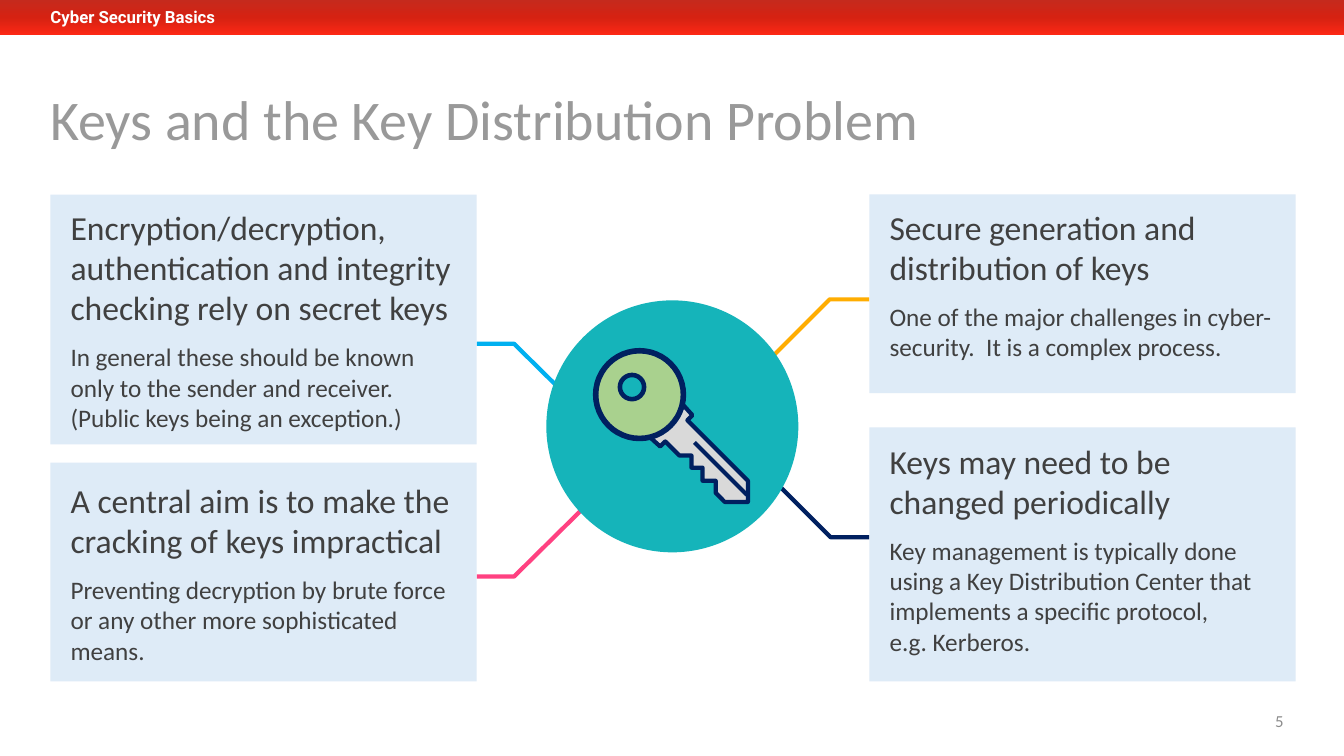
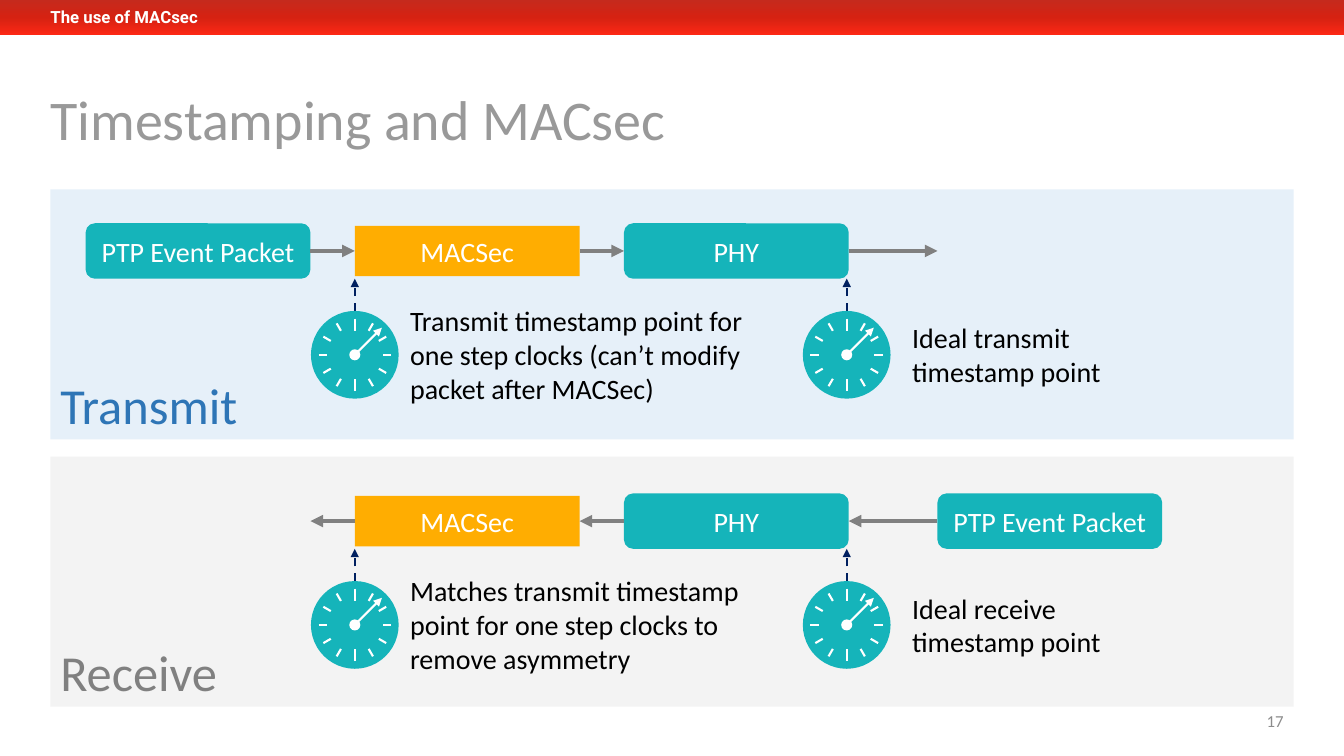
from collections import namedtuple
from copy import deepcopy
from dataclasses import dataclass
from math import cos, radians, sin

from lxml.etree import SubElement
from pptx import Presentation
from pptx.dml.color import RGBColor
from pptx.enum.dml import MSO_LINE as Dash
from pptx.enum.shapes import MSO_CONNECTOR as Wire, MSO_SHAPE as Kind
from pptx.enum.text import MSO_ANCHOR as Anchor, PP_ALIGN as Align
from pptx.oxml.ns import qn
from pptx.util import Inches, Pt

CELL = Inches(0.1)
COLS, ROWS = 133.33, 75
MARGIN = 5

Box = namedtuple("Box", "x y w h")


@dataclass(frozen=True)
class Theme:
    face: str = "Calibri"
    strong: str = "Roboto"
    white: str = "FFFFFF"
    black: str = "000000"
    title: str = "999999"
    number: str = "8C8C8C"
    ink: str = "404040"
    card: str = "DEEBF7"
    teal: str = "15B4BA"
    amber: str = "FFAD01"
    navy: str = "002060"
    sky: str = "00B0F0"
    pink: str = "FF4181"
    green: str = "A9D18E"
    metal: str = "D9D9D9"
    grey: str = "808080"
    blue: str = "2E75B6"
    send: str = "E6F0F9"
    receive: str = "F3F3F3"
    band: tuple = ("C52A1D", "D52212", "FD2815")
    huge: int = 40
    lane: int = 36
    head: int = 24
    flow: int = 20
    body: int = 18
    small: int = 12


T = Theme()


def cells(*sizes):
    return [int(size * CELL) for size in sizes]


def rgb(code):
    return RGBColor.from_string(code)


def paint(shape, fill=None, line=None, width=1):
    shape.shadow.inherit = False
    if fill:
        shape.fill.solid()
        shape.fill.fore_color.rgb = rgb(fill)
    else:
        shape.fill.background()
    if line:
        shape.line.color.rgb = rgb(line)
        shape.line.width = Pt(width)
    else:
        shape.line.fill.background()
    return shape


def put(shapes, kind, box, **style):
    return paint(shapes.add_shape(kind, *cells(*box)), **style)


def trace(shapes, points, closed=False, **style):
    spots = [cells(*point) for point in points]
    path_maker = shapes.build_freeform(*spots[0])
    path_maker.add_line_segments(spots[1:], close=closed)
    return paint(path_maker.convert_to_shape(), **style)


def wire(shapes, start, end, color, width, arrow=False, dash=None):
    link = shapes.add_connector(Wire.STRAIGHT, *cells(*start, *end))
    link.line.color.rgb = rgb(color)
    link.line.width = Pt(width)
    if dash:
        link.line.dash_style = dash
    if arrow:
        SubElement(link.line._get_or_add_ln(), qn("a:tailEnd"), type="triangle")
    SubElement(link._element.spPr, qn("a:effectLst"))
    return link


def write(shape, *parts, size=T.flow, color=T.black, face=T.face, bold=False,
          align=Align.LEFT, anchor=Anchor.TOP, inset=(1, 0.5, 1, 0.5),
          gap=0, spacing=None):
    frame = shape.text_frame
    frame.word_wrap = True
    frame.vertical_anchor = anchor
    (frame.margin_left, frame.margin_top,
     frame.margin_right, frame.margin_bottom) = cells(*inset)
    for i, part in enumerate(parts):
        words, points = part if isinstance(part, tuple) else (part, size)
        para = frame.add_paragraph() if i else frame.paragraphs[0]
        para.text = words
        para.alignment = align
        if spacing:
            para.line_spacing = spacing
        if i and gap:
            para.space_before = Pt(gap)
        for run in para.runs:
            font = run.font
            font.name, font.size, font.bold = face, Pt(points), bold
            font.color.rgb = rgb(color)
    return shape


def label(shapes, box, *parts, **style):
    return write(shapes.add_textbox(*cells(*box)), *parts, **style)


def frame_slide(deck, topic, title, number):
    shapes = deck.slides.add_slide(deck.slide_layouts[6]).shapes
    band = put(shapes, Kind.RECTANGLE, Box(0, 0, COLS, 3.5))
    band.fill.gradient()
    band.fill.gradient_angle = 270
    stops = band._element.spPr.find(qn("a:gradFill")).find(qn("a:gsLst"))
    stops.insert(1, deepcopy(stops[0]))
    for i, stop in enumerate(band.fill.gradient_stops):
        stop.color.rgb = rgb(T.band[i])
        stop.position = i / 2
    label(shapes, Box(MARGIN, 0.15, 39.2, 3), topic, size=T.small, bold=True,
          face=T.strong, color=T.white, inset=(0, 0.5, 1, 0.5))
    label(shapes, Box(MARGIN, 9.1, 97.3, 6.1), title, size=T.huge,
          color=T.title, anchor=Anchor.MIDDLE, inset=(0, 0, 0, 0), spacing=0.9)
    label(shapes, Box(COLS - MARGIN - 30, 69.5, 30, 4), number, size=T.small,
          color=T.number, align=Align.RIGHT, anchor=Anchor.MIDDLE)
    return shapes


def card(shapes, box, head, body, pad=1.2):
    shape = put(shapes, Kind.RECTANGLE, box, fill=T.card)
    write(shape, (head, T.head), (body, T.body), color=T.ink, gap=10,
          inset=(2, pad, 2, 0.5))


def key(shapes, box):
    def shift(*points):
        return [(box.x + x, box.y + y) for x, y in points]

    def ring(x, size, fill, width):
        put(group, Kind.OVAL, Box(box.x + x, box.y + x + 0.1, size, size),
            fill=fill, line=T.navy, width=width)

    put(shapes, Kind.OVAL, box, fill=T.teal)
    group = shapes.add_group_shape().shapes
    blade = shift((10.3, 13.6), (11.3, 14.5), (11.8, 14), (13.2, 15.4),
                  (14.4, 15.4), (14.4, 16.6), (15.5, 16.6), (15.5, 17.9),
                  (16.8, 17.9), (16.8, 19.1), (17.7, 20), (20, 20),
                  (20, 17.9), (14, 11.9), (14.5, 11.4), (13.6, 10.4),
                  (12.9, 11.8), (11.5, 13))
    trace(group, blade, closed=True, fill=T.metal, line=T.navy, width=3)
    wire(group, *shift((14.7, 14.1), (19.9, 19.3)), T.navy, 3)
    ring(4.9, 8.7, T.green, 4)
    ring(7.3, 2.4, T.teal, 3.25)


def keys_slide(deck):
    shapes = frame_slide(deck, "Cyber Security Basics",
                         "Keys and the Key Distribution Problem", "5")
    wide, left, right = 42.3, MARGIN, 86.25
    for edge, bend, level, tip, color in (
            (right, 82.3, 29.7, (69.2, 42.8), T.amber),
            (right, 82.4, 53.3, (69.3, 40.2), T.navy),
            (left + wide, 51, 34.1, (59, 42), T.sky),
            (left + wide, 51, 57.2, (59, 49.3), T.pink)):
        trace(shapes, [(edge, level), (bend, level), tip], line=color, width=3)
    card(shapes, Box(left, 19.3, wide, 24.8),
         "Encryption/decryption, authentication and integrity checking rely on "
         "secret keys",
         "In general these should be known only to the sender and receiver. "
         "(Public keys being an exception.)")
    card(shapes, Box(left, 45.9, wide, 21.7),
         "A central aim is to make the cracking of keys impractical",
         "Preventing decryption by brute force or any other more "
         "sophisticated means.", pad=1.7)
    card(shapes, Box(right, 19.3, wide, 19.7),
         "Secure generation and distribution of keys",
         "One of the major challenges in cyber-security.  It is a complex "
         "process.")
    card(shapes, Box(right, 42.4, wide, 25.2),
         "Keys may need to be changed periodically",
         "Key management is typically done using a Key Distribution Center "
         "that implements a specific protocol, \ve.g. Kerberos.", pad=1.3)
    key(shapes, Box(54.2, 29.8, 25, 25))


def clock(shapes, x, y, radius=4.35):
    def spot(turn, reach):
        angle = radians(turn)
        return x + reach * sin(angle), y - reach * cos(angle)

    group = shapes.add_group_shape().shapes
    wire(group, spot(0, radius), spot(0, radius + 3.2), T.navy, 1.5,
         arrow=True, dash=Dash.DASH)
    put(group, Kind.OVAL, Box(x - radius, y - radius, 2 * radius, 2 * radius),
        fill=T.teal)
    for turn in range(0, 360, 30):
        inner = 2.4 if turn % 180 == 0 else 2.75
        wire(group, spot(turn, 3.6), spot(turn, inner), T.white, 1.5)
    put(group, Kind.OVAL, Box(x - 0.55, y - 0.55, 1.1, 1.1), fill=T.white)
    wire(group, (x, y), spot(45, 3.8), T.white, 1.5, arrow=True)


def lane(shapes, box, name, tint, color, steps, leave, notes, drop=0):
    wide, tall, gap = 22.3, 5.5, 4.4
    mid = box.y + 6.1 + drop
    write(put(shapes, Kind.RECTANGLE, box, fill=tint), name, size=T.lane,
          color=color, anchor=Anchor.BOTTOM)
    nodes = []
    for words, x in steps:
        plain = words == "MACSec"
        high = 5 if plain else tall
        node = put(shapes, Kind.RECTANGLE if plain else Kind.ROUNDED_RECTANGLE,
                   Box(box.x + x, mid - high / 2, wide, high),
                   fill=T.amber if plain else T.teal)
        write(node, words, color=T.white, align=Align.CENTER,
              anchor=Anchor.MIDDLE, inset=(1, 0.8, 1, 0.8))
        nodes.append(node)
    out, into = (3, 1) if steps[0][1] < steps[-1][1] else (1, 3)
    for i, node in enumerate(nodes):
        end = (box.x + leave, mid)
        link = wire(shapes, end, end, T.grey, 3, arrow=True)
        link.begin_connect(node, out)
        if i + 1 < len(nodes):
            link.end_connect(nodes[i + 1], into)
    level = box.y + 16.4 + drop
    for words, x, shift, width, high in notes:
        clock(shapes, box.x + x, level)
        label(shapes, Box(box.x + x + shift, level - high / 2, width, high),
              words)


def timing_slide(deck):
    shapes = frame_slide(deck, "The use of MACsec",
                         "Timestamping and MACsec", "17")
    wide, high = COLS - 2 * MARGIN, 24.8
    first, mac, phy, last = 3.5, 30.2, 56.9, 88

    def notes(long, short):
        return (long, mac, 4.5, 35.6, 11.1), (short, 79, 5.5, 25, 7.7)

    lane(shapes, Box(MARGIN, 18.8, wide, high), "Transmit", T.send, T.blue,
         [("PTP Event Packet", first), ("MACSec", mac), ("PHY", phy)], last,
         notes("Transmit timestamp point for one step clocks (can’t modify "
               "packet after MACSec)", "Ideal transmit timestamp point"))
    lane(shapes, Box(MARGIN, 45.3, wide, high), "Receive", T.receive, T.grey,
         [("PTP Event Packet", last), ("PHY", phy), ("MACSec", mac)], mac - 4.4,
         notes("Matches transmit timestamp\vpoint for one step clocks to "
               "remove asymmetry", "Ideal receive timestamp point"), drop=0.3)


def main():
    deck = Presentation()
    deck.slide_width, deck.slide_height = cells(COLS, ROWS)
    keys_slide(deck)
    timing_slide(deck)
    deck.save("out.pptx")


if __name__ == "__main__":
    main()
